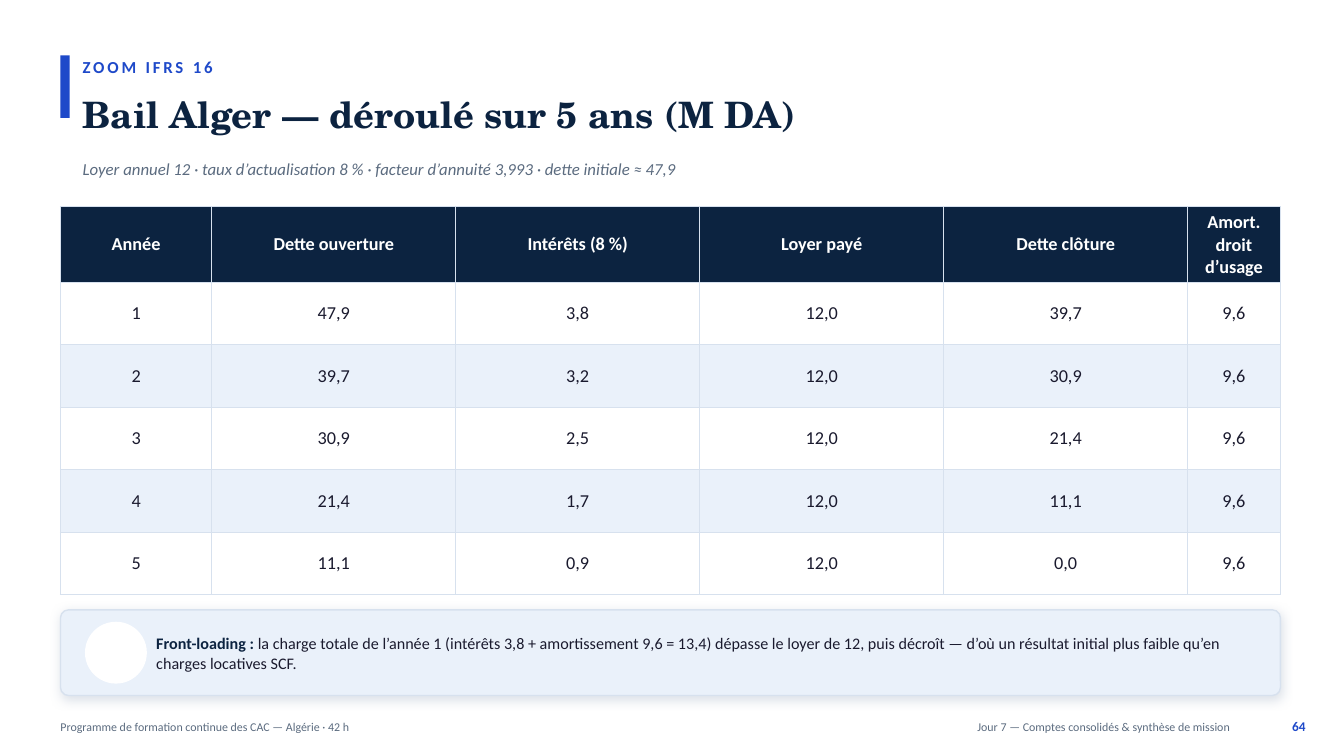
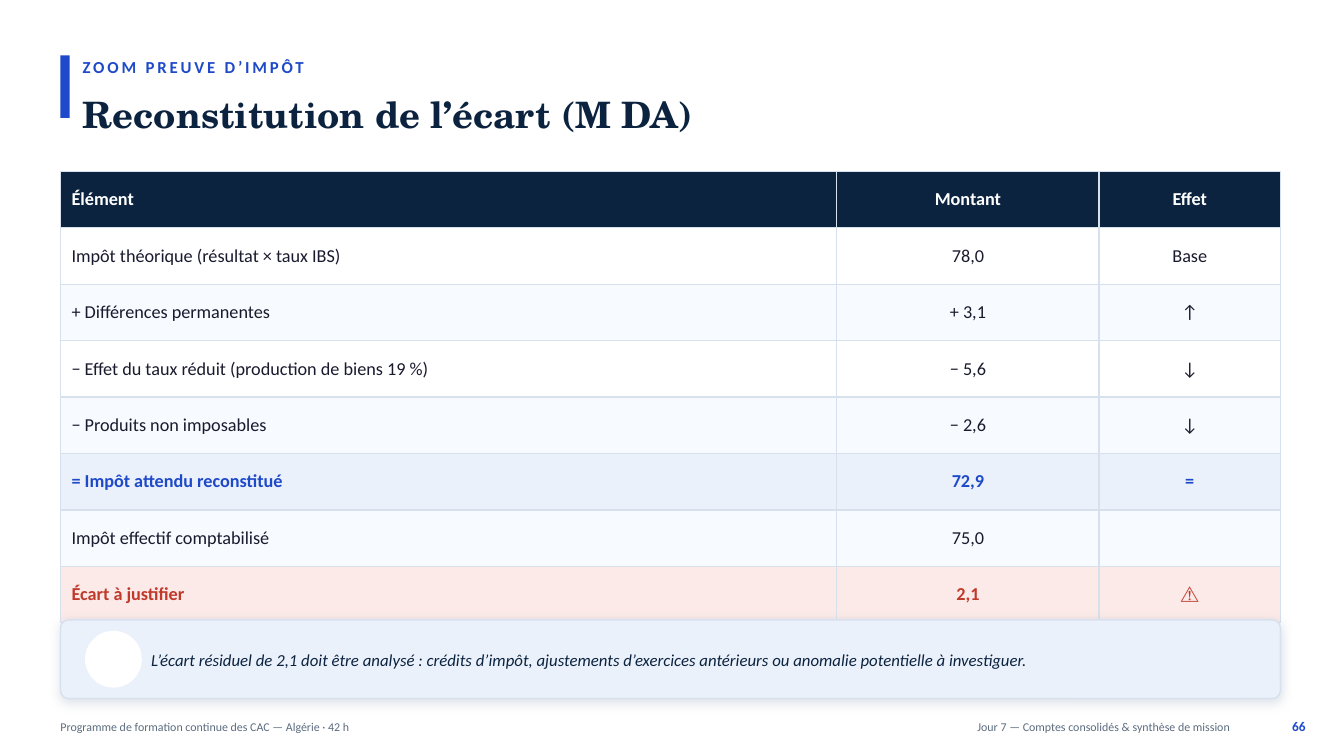
from lxml import etree
from pptx import Presentation
from pptx import util as u
from pptx.dml import color
from pptx.enum import shapes, text
from pptx.oxml import ns, parse_xml

COLORS = {
    "white": "FFFFFF", "navy": "0C2340", "blue": "1E49C9", "ink": "1A1A2E",
    "grey": "5B6B7F", "border": "D7E1EE", "pale": "EAF1FA", "mist": "F7FAFE",
    "red": "C0392B", "rose": "FBEAE8", "shadow": "8496B0",
}
BODY_FONT, TITLE_FONT = "Calibri", "TeX Gyre Schola"
LEFT, WIDTH = 0.6, 12.1
TEXT_LEFT = 0.82
ALIGN = text.PP_ALIGN

STYLES = {
    "kicker": dict(size=12, color="blue", bold=True),
    "title": dict(name=TITLE_FONT, size=26, color="navy", bold=True),
    "subtitle": dict(size=12, color="grey", italic=True),
    "footer": dict(size=8.5, color="grey"),
    "number": dict(size=9.5, color="blue", bold=True),
    "lead": dict(size=11.5, color="navy", bold=True),
    "note": dict(size=11.5, color="ink"),
    "remark": dict(size=12, color="navy", italic=True),
}
# Table rows: fill, text colour, bold
ROWS = {
    "header": ("navy", "white", True), "plain": ("white", "ink", False),
    "band": ("pale", "ink", False), "light": ("mist", "ink", False),
    "total": ("pale", "blue", True), "alert": ("rose", "red", True),
}


def rgb(name):
    return color.RGBColor.from_string(COLORS[name])


def add_run(paragraph, words, style):
    run = paragraph.add_run()
    run.text = words
    for key, value in {"name": BODY_FONT, **style}.items():
        if key == "color":
            run.font.color.rgb = rgb(value)
        else:
            setattr(run.font, key, u.Pt(value) if key == "size" else value)
    return run


def add_text(slide, box, runs, align=ALIGN.LEFT, line_spacing=None):
    frame = slide.shapes.add_textbox(*map(u.Inches, box)).text_frame
    settings = dict(word_wrap=True, vertical_anchor=text.MSO_ANCHOR.MIDDLE,
                    margin_left=0, margin_top=0, margin_right=0, margin_bottom=0)
    for key, value in settings.items():
        setattr(frame, key, value)
    paragraph = frame.paragraphs[0]
    paragraph.alignment = align
    paragraph.line_spacing = line_spacing
    return [add_run(paragraph, words, STYLES[style]) for words, style in runs]


def add_panel(slide, kind, box, fill, line=None):
    shape = slide.shapes.add_shape(kind, *map(u.Inches, box))
    shape.shadow.inherit = False
    shape.fill.solid()
    shape.fill.fore_color.rgb = rgb(fill)
    if line:
        shape.line.color.rgb = rgb(line)
        shape.line.width = u.Pt(1)
    else:
        shape.line.fill.background()
    return shape


def add_header(slide, kicker, title, subtitle=None):
    add_panel(slide, shapes.MSO_SHAPE.RECTANGLE, (LEFT, 0.55, 0.09, 0.62), "blue")
    kicker_run, = add_text(slide, (TEXT_LEFT, 0.5, 10.5, 0.32), [(kicker, "kicker")])
    kicker_run._r.get_or_add_rPr().set("spc", "200")
    add_text(slide, (TEXT_LEFT, 0.78, 11.9, 0.7), [(title, "title")])
    if subtitle:
        add_text(slide, (TEXT_LEFT, 1.5, 11.8, 0.35), [(subtitle, "subtitle")])


def add_footer(slide, number):
    add_text(slide, (LEFT, 7.06, 8, 0.3),
             [("Programme de formation continue des CAC — Algérie · 42 h", "footer")])
    add_text(slide, (8.2, 7.06, 4, 0.3),
             [("Jour 7 — Comptes consolidés & synthèse de mission", "footer")], ALIGN.RIGHT)
    add_text(slide, (12.45, 7.04, 0.5, 0.32), [(str(number), "number")], ALIGN.RIGHT)


def format_cell(cell, words, row_style, align):
    fill, ink, bold = ROWS[row_style]
    cell.vertical_anchor = text.MSO_ANCHOR.MIDDLE
    properties = cell._tc.get_or_add_tcPr()
    for side in ("lnL", "lnR", "lnT", "lnB"):
        line = etree.SubElement(properties, ns.qn(f"a:{side}"), w=str(u.Pt(1)))
        solid = etree.SubElement(line, ns.qn("a:solidFill"))
        etree.SubElement(solid, ns.qn("a:srgbClr"), val=COLORS["border"])
    cell.fill.solid()
    cell.fill.fore_color.rgb = rgb(fill)
    paragraph = cell.text_frame.paragraphs[0]
    paragraph.alignment = align
    if words:
        add_run(paragraph, words, dict(size=13, color=ink, bold=bold and words != "⚠"))


def add_data_table(slide, top, widths, row_height, rows,
                   first_align=ALIGN.CENTER, margins=(0.1, 0.05)):
    """rows is a list of (row style, cell texts)."""
    frame = slide.shapes.add_table(len(rows), len(widths), *map(
        u.Inches, (LEFT, top, sum(widths), row_height * len(rows))))
    table = frame.table
    for column, width in zip(table.columns, widths):
        column.width = u.Inches(width)
    across, down = map(u.Inches, margins)
    for row, (row_style, values) in zip(table.rows, rows):
        row.height = u.Inches(row_height)
        for index, (cell, words) in enumerate(zip(row.cells, values)):
            cell.margin_left = cell.margin_right = across
            cell.margin_top = cell.margin_bottom = down
            format_cell(cell, words, row_style, ALIGN.CENTER if index else first_align)


def add_callout(slide, top, height, disc, runs):
    panel = add_panel(slide, shapes.MSO_SHAPE.ROUNDED_RECTANGLE,
                      (LEFT, top, WIDTH, height), "pale", "border")
    panel.adjustments[0] = 0.08 / height
    # Soft shadow below the panel
    properties = panel._element.spPr
    properties.remove(properties.find(ns.qn("a:effectLst")))
    properties.append(parse_xml(
        f'<a:effectLst {ns.nsdecls("a")}><a:outerShdw blurRad="{u.Pt(8)}" '
        f'dist="{u.Pt(2)}" dir="5400000" algn="ctr" rotWithShape="0">'
        f'<a:srgbClr val="{COLORS["shadow"]}"><a:alpha val="28000"/></a:srgbClr>'
        '</a:outerShdw></a:effectLst>'))
    # Disc and message
    disc_left = LEFT + 0.25
    add_panel(slide, shapes.MSO_SHAPE.OVAL,
              (disc_left, top + (height - disc) / 2, disc, disc), "white", "white")
    text_left = disc_left + disc + 0.1
    add_text(slide, (text_left, top + 0.05, LEFT + WIDTH - 0.25 - text_left, height - 0.1),
             runs, line_spacing=1.05)


def new_slide(presentation):
    return presentation.slides.add_slide(presentation.slide_layouts[6])


def build_lease_slide(presentation):
    slide = new_slide(presentation)
    add_header(slide, "ZOOM IFRS 16", "Bail Alger — déroulé sur 5 ans (M DA)",
               "Loyer annuel 12 · taux d’actualisation 8 % · facteur d’annuité 3,993 "
               "· dette initiale ≈ 47,9")
    debts = ["47,9", "39,7", "30,9", "21,4", "11,1", "0,0"]
    interests = ["3,8", "3,2", "2,5", "1,7", "0,9"]
    rows = [("header", ["Année", "Dette ouverture", "Intérêts (8 %)", "Loyer payé",
                        "Dette clôture", "Amort. droit d’usage"])]
    for year, interest in enumerate(interests, 1):
        rows.append(("plain" if year % 2 else "band",
                     [str(year), debts[year - 1], interest, "12,0", debts[year], "9,6"]))
    add_data_table(slide, 2.05, [1.5] + [2.42] * 4 + [0.92], 0.62, rows)
    add_callout(slide, 6.05, 0.85, 0.6, [
        ("Front-loading : ", "lead"),
        ("la charge totale de l’année 1 (intérêts 3,8 + amortissement 9,6 = 13,4) dépasse "
         "le loyer de 12, puis décroît — d’où un résultat initial plus faible qu’en "
         "charges locatives SCF.", "note")])
    add_footer(slide, 64)


def build_tax_slide(presentation):
    slide = new_slide(presentation)
    add_header(slide, "ZOOM PREUVE D’IMPÔT", "Reconstitution de l’écart (M DA)")
    rows = [
        ("header", ["Élément", "Montant", "Effet"]),
        ("plain", ["Impôt théorique (résultat × taux IBS)", "78,0", "Base"]),
        ("light", ["+ Différences permanentes", "+ 3,1", "↑"]),
        ("plain", ["− Effet du taux réduit (production de biens 19 %)", "− 5,6", "↓"]),
        ("light", ["− Produits non imposables", "− 2,6", "↓"]),
        ("total", ["= Impôt attendu reconstitué", "72,9", "="]),
        ("light", ["Impôt effectif comptabilisé", "75,0", ""]),
        ("alert", ["Écart à justifier", "2,1", "⚠"]),
    ]
    add_data_table(slide, 1.7, [7.7, 2.6, 1.8], 0.56, rows, ALIGN.LEFT, (0.11, 0.04))
    add_callout(slide, 6.15, 0.78, 0.55, [
        ("L’écart résiduel de 2,1 doit être analysé : crédits d’impôt, ajustements "
         "d’exercices antérieurs ou anomalie potentielle à investiguer.", "remark")])
    add_footer(slide, 66)


def main():
    presentation = Presentation()
    presentation.slide_width = u.Inches(13.33)
    presentation.slide_height = u.Inches(7.5)
    build_lease_slide(presentation)
    build_tax_slide(presentation)
    presentation.save("out.pptx")


if __name__ == "__main__":
    main()
